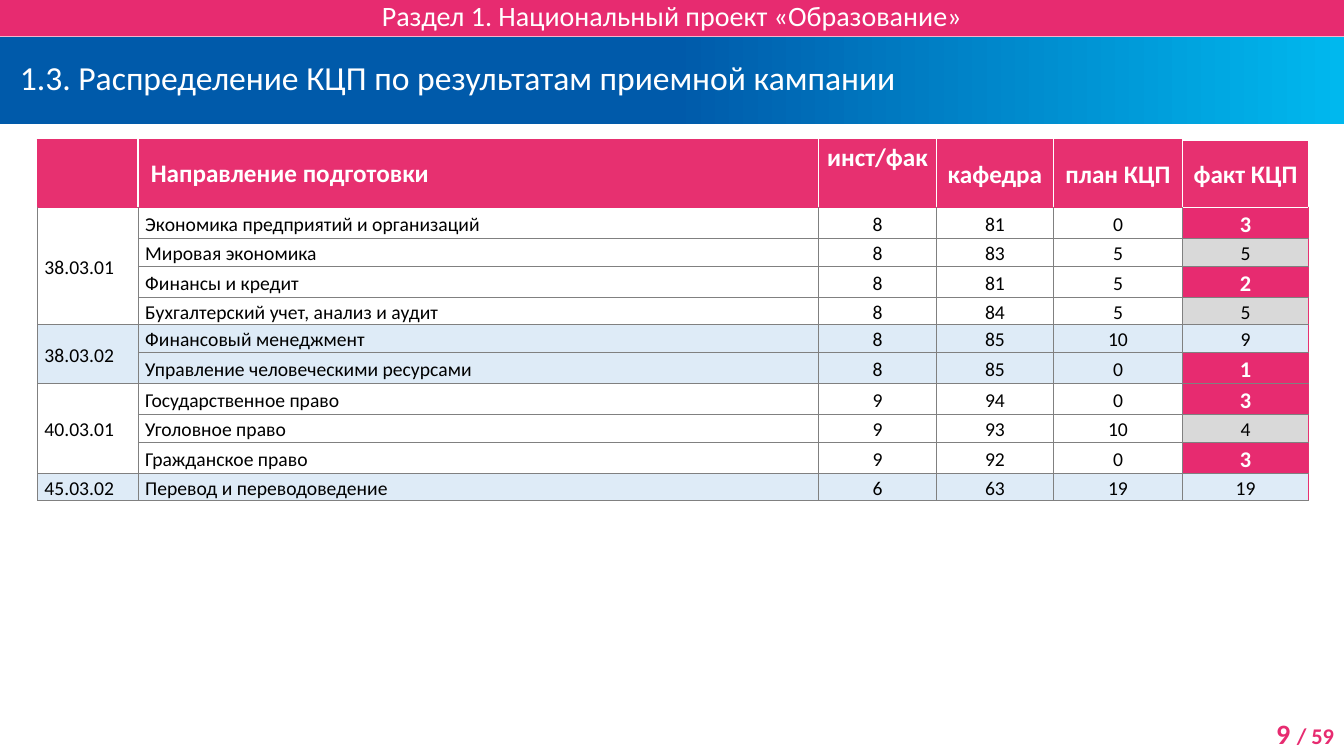
from lxml.etree import SubElement
from pptx import Presentation
from pptx.dml.color import RGBColor
from pptx.enum.text import MSO_ANCHOR as Anchor, MSO_AUTO_SIZE as AutoSize, PP_ALIGN as Align
from pptx.oxml.ns import qn
from pptx.util import Cm, Pt

PINK, HEADER_PINK, WHITE, BLACK = "E72B70", "E73070", "FFFFFF", "000000"
GRID, GREY, PALE_BLUE = "808080", "D9D9D9", "DEEBF7"
WIDTH, HEIGHT = 33.87, 19.05

COLUMN_WIDTHS = [2.54, 17.15, 2.97, 2.95, 3.25, 3.18]
HEADINGS = ["", "Направление подготовки", "инст/фак", "кафедра", "план КЦП", "факт КЦП"]
PROGRAMMES = [
    ("38.03.01", None, [
        ("Экономика предприятий и организаций", 8, 81, 0, 3, PINK),
        ("Мировая экономика", 8, 83, 5, 5, GREY),
        ("Финансы и кредит", 8, 81, 5, 2, PINK),
        ("Бухгалтерский учет, анализ и аудит", 8, 84, 5, 5, GREY)]),
    ("38.03.02", PALE_BLUE, [
        ("Финансовый менеджмент", 8, 85, 10, 9, PALE_BLUE),
        ("Управление человеческими ресурсами", 8, 85, 0, 1, PINK)]),
    ("40.03.01", None, [
        ("Государственное право", 9, 94, 0, 3, PINK),
        ("Уголовное право", 9, 93, 10, 4, GREY),
        ("Гражданское право", 9, 92, 0, 3, PINK)]),
    ("45.03.02", PALE_BLUE, [
        ("Перевод и переводоведение", 6, 63, 19, 19, PALE_BLUE)]),
]


def rgb(value):
    """Turn a hex string into a colour."""
    return RGBColor.from_string(value)


def add_run(paragraph, text, size, color, bold=False):
    """Append one formatted run to a paragraph."""
    run = paragraph.add_run()
    run.text = text
    run.font.name, run.font.size, run.font.bold = "Calibri", Pt(size), bold
    run.font.color.rgb = rgb(color)


def place_bar(bar, box, text, size, align, indent=0.0):
    """Move a placeholder to its box and write its single line."""
    bar.left, bar.top, bar.width, bar.height = map(Cm, box)
    frame = bar.text_frame
    frame.auto_size, frame.word_wrap = AutoSize.NONE, True
    frame.vertical_anchor = Anchor.MIDDLE
    frame.margin_left, frame.margin_right = Cm(indent), 0
    frame.margin_top = frame.margin_bottom = 0
    line = frame.paragraphs[0]
    line.alignment, line.space_before = align, Pt(0)
    line.line_spacing = Pt(size)
    add_run(line, text, size, WHITE)


def section_bar(slide, box):
    """Fill the pink strip with the section name."""
    section = slide.placeholders[1]
    place_bar(section, box, "Раздел 1. Национальный проект «Образование»", 20, Align.CENTER)
    section.fill.solid()
    section.fill.fore_color.rgb = rgb(PINK)


def title_bar(slide, box):
    """Fill the blue gradient strip with the slide title."""
    title = slide.shapes.title
    place_bar(title, box, "1.3. Распределение КЦП по результатам приемной кампании",
              24, Align.LEFT, indent=0.5)
    title.fill.gradient()
    title.fill.gradient_angle = 0
    for stop, position, color in zip(title.fill.gradient_stops, (0.5, 1), ("005AAA", "00B8EE")):
        stop.position = position
        stop.color.rgb = rgb(color)


def format_cell(cell, borders, width, fill):
    """Set the borders (left, right, top, bottom), insets and fill of a cell."""
    properties = cell._tc.get_or_add_tcPr()
    for side, color in zip(("lnL", "lnR", "lnT", "lnB"), borders):
        points = width if color == GRID else 1
        border = SubElement(properties, qn(f"a:{side}"), w=str(Pt(points)))
        SubElement(SubElement(border, qn("a:solidFill")), qn("a:srgbClr"), val=color)
    cell.margin_left = cell.margin_right = Cm(0.18)
    cell.margin_top = cell.margin_bottom = 0
    cell.vertical_anchor = Anchor.MIDDLE
    if fill:
        cell.fill.solid()
        cell.fill.fore_color.rgb = rgb(fill)
    else:
        cell.fill.background()


def write_cell(cell, text, align, spacing, size, color, bold):
    """Write one line of text into a cell."""
    line = cell.text_frame.paragraphs[0]
    line.alignment, line.line_spacing = align, spacing
    add_run(line, str(text), size, color, bold)


def header_row(table):
    """Fill the pink heading row."""
    table.rows[0].height = Cm(1.69)
    last = len(HEADINGS) - 1
    for column, heading in enumerate(HEADINGS):
        cell = table.cell(0, column)
        edge = WHITE if column == last else HEADER_PINK
        left = WHITE if column else HEADER_PINK
        format_cell(cell, (left, WHITE, edge, edge), 1, HEADER_PINK)
        if heading:
            align = Align.CENTER if column > 1 else Align.LEFT
            write_cell(cell, heading, align, 1.07 if column > 1 else 1.0, 18, WHITE, True)
    table.cell(0, 1).margin_left = Cm(0.32)
    table.cell(0, 2).vertical_anchor = Anchor.TOP


def programme_row(table, row, code, shade, values, result_fill):
    """Fill one body row; the code is empty below the first row of a group."""
    changed = result_fill == PINK
    table.rows[row].height = Cm(0.79 if changed else 0.69)
    last = len(values)
    for column, value in enumerate((code, *values)):
        cell = table.cell(row, column)
        is_result = column == last
        top = GRID if row > 1 else WHITE if is_result else HEADER_PINK
        right = HEADER_PINK if is_result else GRID
        format_cell(cell, (GRID, right, top, GRID), 0.25, result_fill if is_result else shade)
        if value != "":
            strong = is_result and changed
            write_cell(cell, value, Align.CENTER if column > 1 else Align.LEFT, 1.15,
                       16 if strong else 14, WHITE if strong else BLACK, strong)


def admission_table(slide, box):
    """Place the table of admission results."""
    row_count = 1 + sum(len(profiles) for _, _, profiles in PROGRAMMES)
    table = slide.shapes.add_table(row_count, len(HEADINGS), *map(Cm, box)).table
    table.first_row = table.horz_banding = False
    for column, width in zip(table.columns, COLUMN_WIDTHS):
        column.width = Cm(width)
    header_row(table)
    row = 1
    for code, shade, profiles in PROGRAMMES:
        first = row
        for *values, result_fill in profiles:
            programme_row(table, row, code if row == first else "", shade, values, result_fill)
            row += 1
        if len(profiles) > 1:
            table.cell(first, 0).merge(table.cell(row - 1, 0))


def page_number(slide, box):
    """Write the page number and the page total."""
    frame = slide.shapes.add_textbox(*map(Cm, box)).text_frame
    frame.word_wrap = True
    line = frame.paragraphs[0]
    line.alignment = Align.RIGHT
    add_run(line, "9 ", 20, PINK, True)
    add_run(line, "/ 59", 16, PINK, True)


def main():
    """Build and save the slide."""
    deck = Presentation()
    deck.slide_width, deck.slide_height = Cm(WIDTH), Cm(HEIGHT)
    slide = deck.slides.add_slide(deck.slide_layouts[0])
    page_number(slide, (WIDTH - 3.05, HEIGHT - 1.12, 3.05, 1.12))
    title_bar(slide, (0, 0.93, WIDTH, 2.2))
    section_bar(slide, (0, 0, WIDTH, 0.92))
    admission_table(slide, (0.94, 3.53, sum(COLUMN_WIDTHS), 8.13))
    deck.save("out.pptx")


if __name__ == "__main__":
    main()
